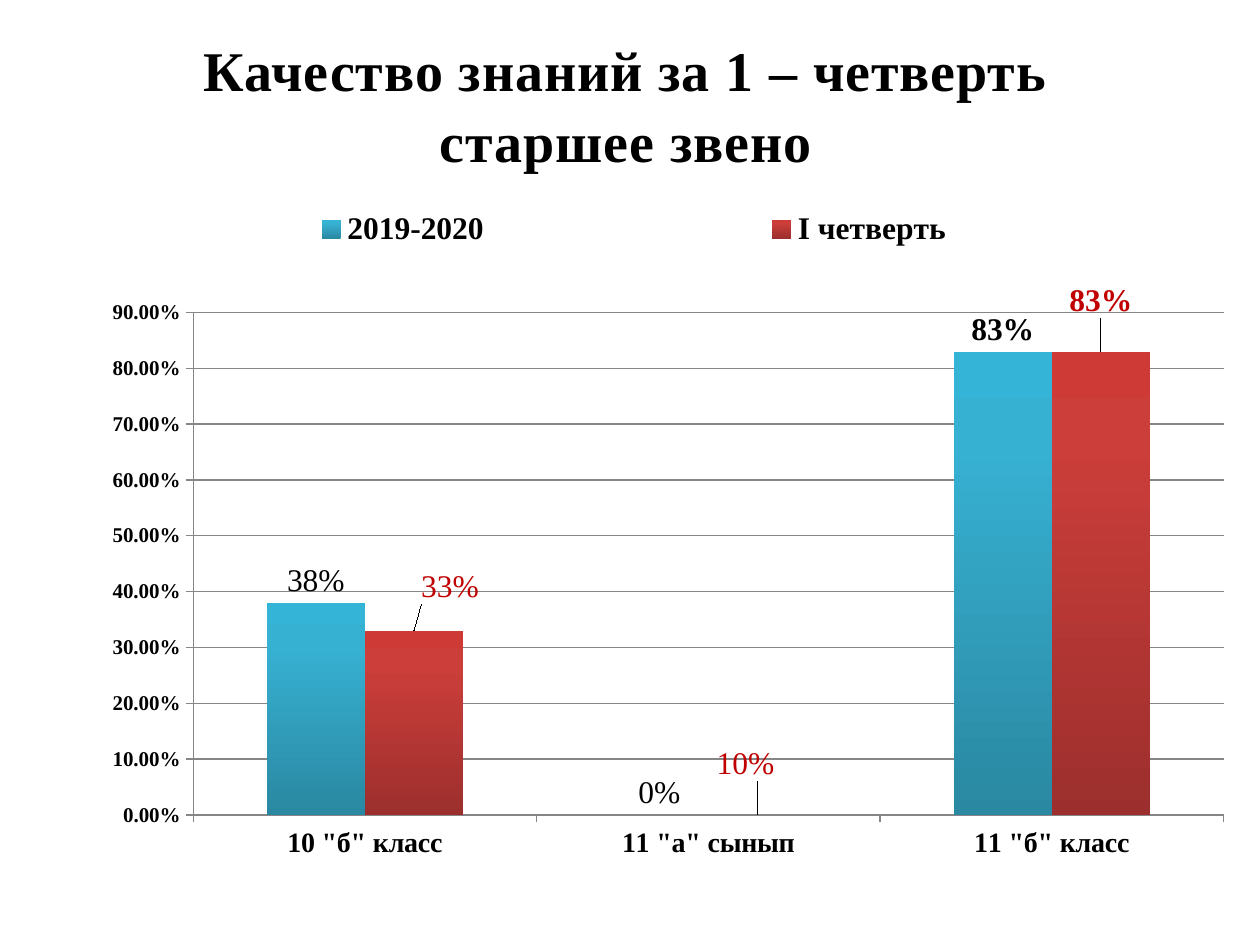
from copy import deepcopy
from dataclasses import dataclass

from pptx import Presentation, util as u
from pptx.chart.data import CategoryChartData
from pptx.dml.color import RGBColor
from pptx.enum import chart as ch, text
from pptx.oxml import parse_xml
from pptx.oxml.ns import nsdecls, qn

FONT = "Times New Roman"
BLACK, RED, GREY = "000000", "C00000", "868686"
CATEGORIES = ['10 "б" класс', '11 "а" сынып', '11 "б" класс']


@dataclass
class PointLabel:
    index: int
    caption: str = ""  # empty: the value itself is shown
    dx: float = 0
    dy: float = 0


@dataclass
class QualitySeries:
    name: str
    values: list[float]
    stops: list[tuple[float, str]]
    label_color: str
    labels: list[PointLabel]


SERIES = [
    QualitySeries("2019-2020", [0.38, 0, 0.83],
                  [(0, "2A88A2"), (0.8, "37B1D2"), (1, "34B4D6")], BLACK,
                  [PointLabel(0, "38%"), PointLabel(1, "0%")]),
    QualitySeries("I четверть", [0.33, 0, 0.83],
                  [(0, "9C2F2D"), (0.8, "CB3E3A"), (1, "CE3B37")], RED,
                  [PointLabel(0, "33%", 0.03, -0.03),
                   PointLabel(1, "10%", -0.01, -0.04),
                   PointLabel(2, "", 0, -0.04)]),
]


def rgb(value: str) -> RGBColor:
    return RGBColor.from_string(value)


def set_font(font, size: float, color: str = BLACK, bold: bool = True) -> None:
    font.name, font.size, font.bold = FONT, u.Pt(size), bold
    font.color.rgb = rgb(color)


def manual_layout(x: float, y: float, w: float = 0, h: float = 0, target: str = "",
                  edge: bool = True):
    """Return a c:layout; with edge False, x and y are offsets from the default place."""
    items = [("layoutTarget", target)] if target else []
    if edge:
        items += [("xMode", "edge"), ("yMode", "edge")]
    items += [("x", x), ("y", y)]
    if w:
        items += [("w", w), ("h", h)]
    inner = "".join(f'<c:{tag} val="{val}"/>' for tag, val in items)
    return parse_xml(f'<c:layout {nsdecls("c")}><c:manualLayout>{inner}'
                     "</c:manualLayout></c:layout>")


def put_layout(parent, layout, after: str = "") -> None:
    """Replace the layout of parent, placing it after the named child or first."""
    for old in parent.findall(qn("c:layout")):
        parent.remove(old)
    if after:
        parent.find(qn(after)).addnext(layout)
    else:
        parent.insert(0, layout)


def fill_gradient(series, stops: list[tuple[float, str]]) -> None:
    fill = series.format.fill
    fill.gradient()
    fill.gradient_angle = 90
    stop_list = next(series._element.iter(qn("a:gsLst")))
    stop_list.append(deepcopy(stop_list[-1]))
    for stop, (position, color) in zip(fill.gradient_stops, stops):
        stop.position = position
        stop.color.rgb = rgb(color)


def label_point(series, label: PointLabel, color: str) -> None:
    dl = series.points[label.index].data_label
    if label.caption:
        r = dl.text_frame.paragraphs[0].add_run()
        r.text = label.caption
        set_font(r.font, 18, color, bold=False)
    else:
        set_font(dl.font, 18, color)
    dl.position = ch.XL_LABEL_POSITION.OUTSIDE_END
    if label.dx or label.dy:
        element = next(e for e in series._element.iter(qn("c:dLbl"))
                       if e.find(qn("c:idx")).get("val") == str(label.index))
        put_layout(element, manual_layout(label.dx, label.dy, edge=False), "c:idx")


def style_series(series, item: QualitySeries) -> None:
    series.invert_if_negative = False
    fill_gradient(series, item.stops)
    labels = series.data_labels
    labels.show_value = True
    labels.number_format, labels.number_format_is_linked = "0%", False
    labels.position = ch.XL_LABEL_POSITION.OUTSIDE_END
    set_font(labels.font, 18, item.label_color)
    for label in item.labels:
        label_point(series, label, item.label_color)


def style_axis(axis, size: float) -> None:
    set_font(axis.tick_labels.font, size)
    axis.major_tick_mark = ch.XL_TICK_MARK.OUTSIDE
    axis.minor_tick_mark = ch.XL_TICK_MARK.NONE
    axis.format.line.color.rgb = rgb(GREY)
    axis.format.line.width = u.Pt(0.75)


def add_title(slide) -> None:
    sp = slide.shapes.title
    sp.left, sp.top, sp.width, sp.height = map(u.Cm, (0.58, 0.58, 24.08, 3))
    tf = sp.text_frame
    tf.word_wrap, tf.vertical_anchor = True, text.MSO_ANCHOR.MIDDLE
    p = tf.paragraphs[0]
    p.alignment, p.line_spacing = text.PP_ALIGN.CENTER, 1.05
    for i, line in enumerate(("Качество знаний за 1 – четверть", "старшее звено")):
        if i:
            p.add_line_break()
        r = p.add_run()
        r.text = line
        set_font(r.font, 32)
        r._r.get_or_add_rPr().set("spc", "50")


def add_quality_chart(slide) -> None:
    data = CategoryChartData(number_format="0%")
    data.categories = CATEGORIES
    for item in SERIES:
        data.add_series(item.name, item.values)
    chart = slide.shapes.add_chart(ch.XL_CHART_TYPE.COLUMN_CLUSTERED,
                                   *map(u.Cm, (0.4, 3.76, 24.28, 14.35)), data).chart
    chart.has_title = False
    chart.font.name, chart.font.size = "Calibri", u.Pt(18)
    chart.font.color.rgb = rgb(BLACK)

    plot = chart.plots[0]
    plot.gap_width, plot.overlap, plot.vary_by_categories = 150, 0, False
    for series, item in zip(plot.series, SERIES):
        style_series(series, item)

    style_axis(chart.category_axis, 16)
    axis = chart.value_axis
    style_axis(axis, 12)
    axis.minimum_scale, axis.maximum_scale, axis.major_unit = 0, 0.9, 0.1
    axis.tick_labels.number_format = "0.00%"
    axis.tick_labels.number_format_is_linked = False
    axis.has_major_gridlines = True
    axis.major_gridlines.format.line.color.rgb = rgb(GREY)
    axis.major_gridlines.format.line.width = u.Pt(0.75)

    chart.has_legend = True
    legend = chart.legend
    legend.position, legend.include_in_layout = ch.XL_LEGEND_POSITION.RIGHT, False
    set_font(legend.font, 18)
    put_layout(legend._element, manual_layout(0.02, 0.01, 0.98, 0.1), "c:legendPos")
    plot_area = next(chart._chartSpace.iter(qn("c:plotArea")))
    put_layout(plot_area, manual_layout(0.144, 0.177, 0.856, 0.706, "inner"))


def main() -> None:
    prs = Presentation()
    prs.slide_width, prs.slide_height = u.Cm(25.4), u.Cm(19.05)
    slide = prs.slides.add_slide(prs.slide_layouts[5])
    add_title(slide)
    add_quality_chart(slide)
    prs.save("out.pptx")


if __name__ == "__main__":
    main()
